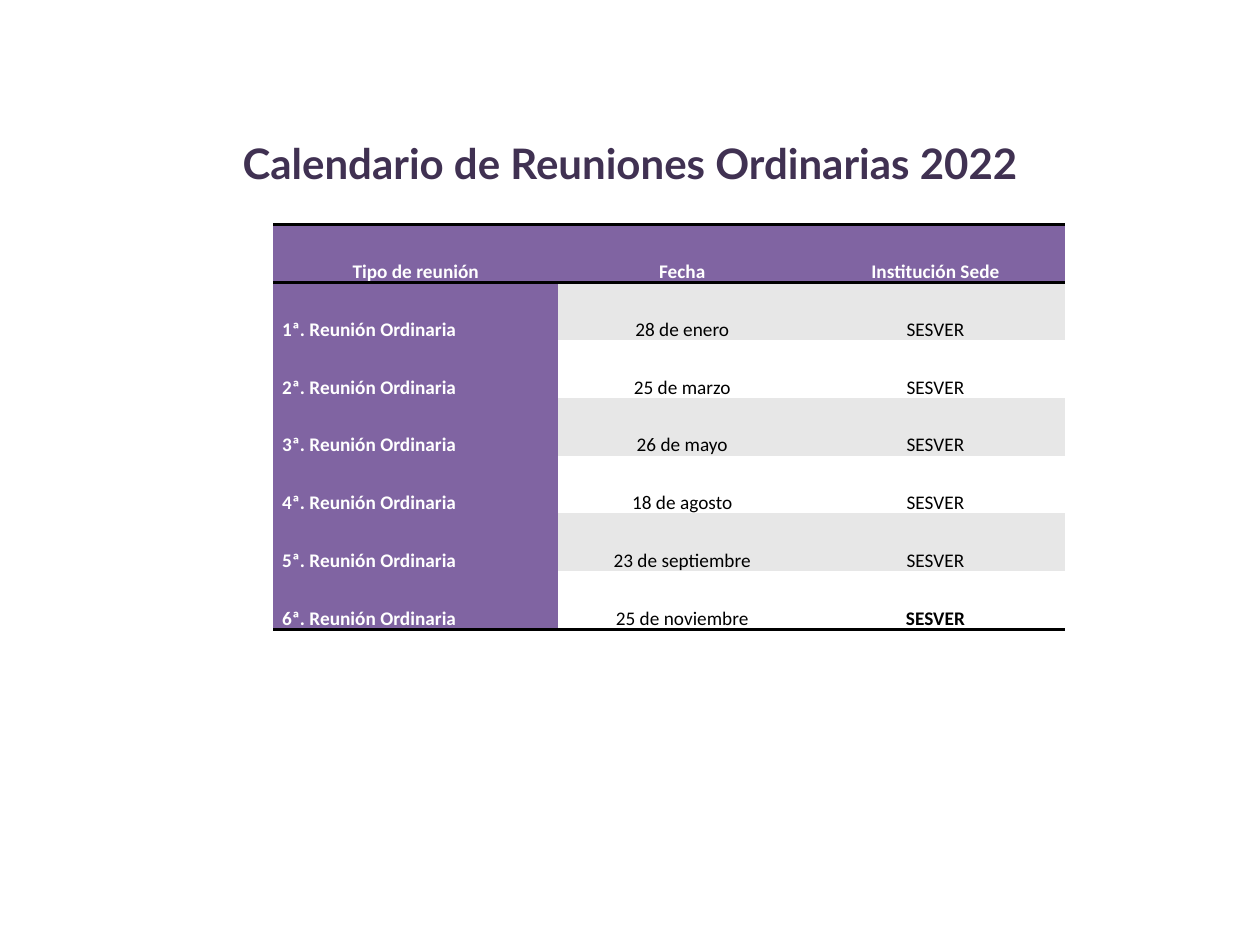
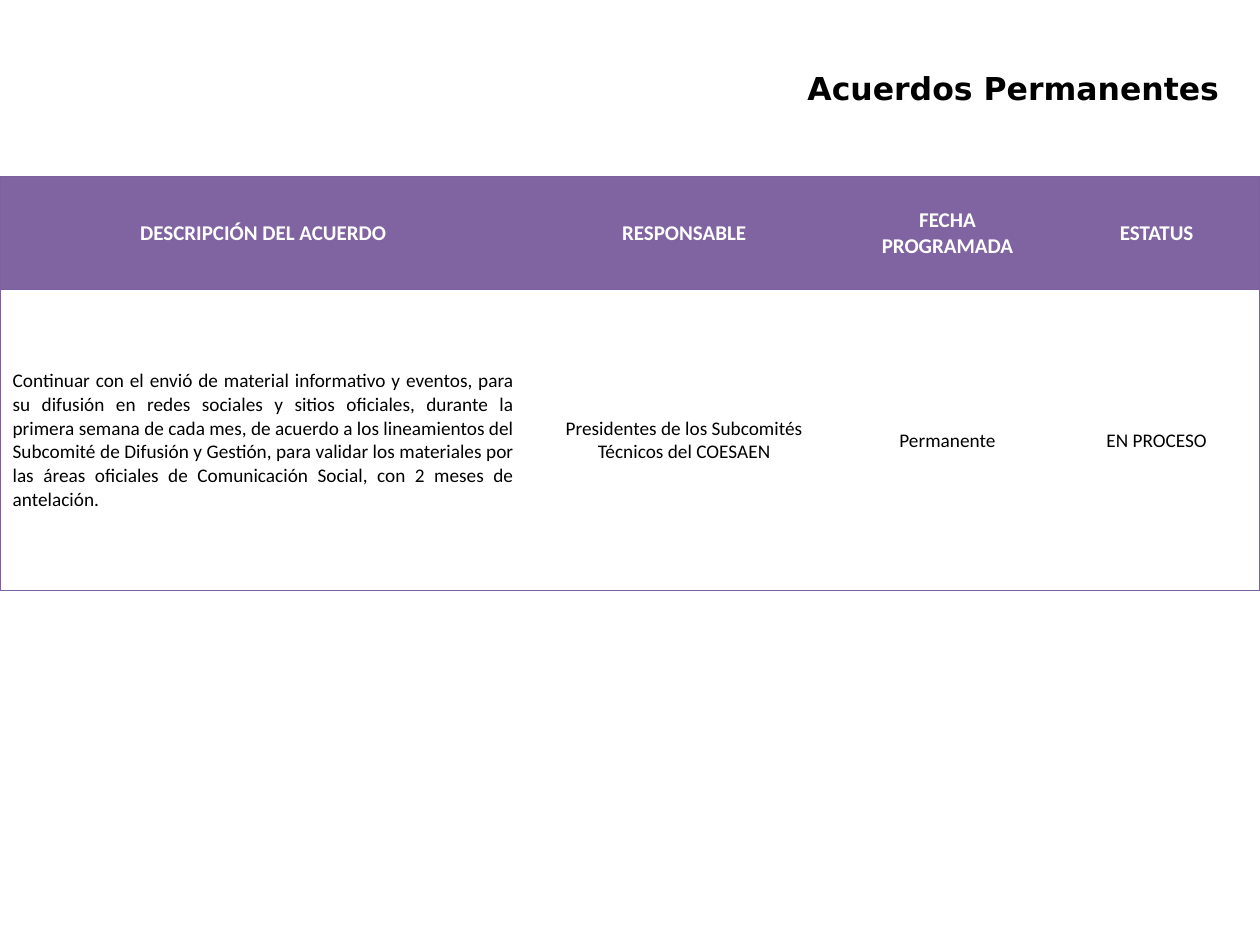
from lxml import etree
from pptx import Presentation
from pptx import util as u
from pptx.dml import color
from pptx.enum import text
from pptx.oxml import ns

PURPLE, BORDER, GREY, WHITE, BLACK = "8064A2", "7D60A0", "E7E7E7", "FFFFFF", "000000"
TITLE_PURPLE = "403152"
PLAIN_TABLE_STYLE = "{2D5ABB26-0587-4C30-8999-92F81FD0307C}"
LEFT, CENTER, JUSTIFY = text.PP_ALIGN.LEFT, text.PP_ALIGN.CENTER, text.PP_ALIGN.JUSTIFY

CALENDAR_TITLE = "Calendario de Reuniones Ordinarias 2022"
CALENDAR_HEADER = ("Tipo de reunión", "Fecha", "Institución Sede")
MEETING_DATES = ("28 de enero", "25 de marzo", "26 de mayo", "18 de agosto",
                 "23 de septiembre", "25 de noviembre")
VENUE = "SESVER"

AGREEMENTS_TITLE = "Acuerdos Permanentes"
AGREEMENTS = (
    ("DESCRIPCIÓN DEL ACUERDO", "RESPONSABLE", "FECHA PROGRAMADA", "ESTATUS"),
    ("Continuar con el envió de material informativo y eventos, para su difusión en redes "
     "sociales y sitios oficiales, durante la primera semana de cada mes, de acuerdo a los "
     "lineamientos del Subcomité de Difusión y Gestión, para validar los materiales por las "
     "áreas oficiales de Comunicación Social, con 2 meses de antelación.",
     "Presidentes de los Subcomités Técnicos del COESAEN", "Permanente", "EN PROCESO"),
)


def rgb(value):
    return color.RGBColor.from_string(value)


def format_paragraph(paragraph, font, size, colour, bold, align):
    paragraph.alignment = align
    for run in paragraph.runs:
        run.font.name = font
        run.font.size = u.Pt(size)
        run.font.bold = bold
        run.font.color.rgb = rgb(colour)


def add_title(slide, content, box, font, size, colour, align, wrap):
    frame = slide.shapes.add_textbox(*map(u.Inches, box)).text_frame
    frame.word_wrap = wrap
    frame.vertical_anchor = text.MSO_ANCHOR.MIDDLE if wrap else text.MSO_ANCHOR.TOP
    frame.text = content
    format_paragraph(frame.paragraphs[0], font, size, colour, True, align)


def add_plain_table(slide, left, top, widths, heights):
    frame = slide.shapes.add_table(
        len(heights), len(widths), u.Inches(left), u.Inches(top),
        u.Inches(sum(widths)), u.Inches(sum(heights)))
    frame.element.find(".//" + ns.qn("a:tableStyleId")).text = PLAIN_TABLE_STYLE
    table = frame.table
    for column, width in zip(table.columns, widths):
        column.width = u.Inches(width)
    for row, height in zip(table.rows, heights):
        row.height = u.Inches(height)
    return table


def set_borders(cell, sides, colour, points):
    properties = cell._tc.get_or_add_tcPr()
    for side in "LRTB":
        if side in sides:
            line = etree.SubElement(properties, ns.qn("a:ln" + side), w=str(u.Pt(points)))
            fill = etree.SubElement(line, ns.qn("a:solidFill"))
            etree.SubElement(fill, ns.qn("a:srgbClr"), val=colour)


def fill_cell(cell, content, fill, size, colour, bold, align):
    cell.fill.solid()
    cell.fill.fore_color.rgb = rgb(fill)
    cell.text_frame.text = content
    format_paragraph(cell.text_frame.paragraphs[0], "Calibri", size, colour, bold, align)


def add_calendar(slide):
    add_title(slide, CALENDAR_TITLE, (0.69, 0.73, 8.62, 1.12), "Lato", 24,
              TITLE_PURPLE, CENTER, True)
    rows = [CALENDAR_HEADER] + [(f"{number}ª. Reunión Ordinaria", date, VENUE)
                                for number, date in enumerate(MEETING_DATES, 1)]
    last = len(rows) - 1
    table = add_plain_table(slide, 2.17, 1.78, (2.26, 1.97, 2.05), [0.43] * last + [0.46])
    for r, row in enumerate(rows):
        for c, content in enumerate(row):
            cell = table.cell(r, c)
            heading = r == 0 or c == 0
            set_borders(cell, {0: "TB", last: "B"}.get(r, ""), BLACK, 2)
            fill_cell(cell, content, PURPLE if heading else GREY if r % 2 else WHITE, 11,
                      WHITE if heading else BLACK, heading or (r, c) == (last, 2),
                      LEFT if r and c == 0 else CENTER)
            cell.margin_left = cell.margin_right = u.Inches(0.07)
            cell.margin_top = cell.margin_bottom = 0
            paragraph = cell.text_frame.paragraphs[0]
            paragraph.line_spacing = 2.5
            paragraph.space_after = u.Pt(10)


def add_agreements(slide):
    widths = (4.18, 2.5, 1.68, 1.64)
    table = add_plain_table(slide, 0, 1.4, widths, (0.9, 2.39))
    for r, row in enumerate(AGREEMENTS):
        for c, content in enumerate(row):
            cell = table.cell(r, c)
            sides = "T" + "B" * (r == 1) + "L" * (c == 0) + "R" * (c == len(widths) - 1)
            set_borders(cell, sides, BORDER, 0.75)
            if r == 0:
                fill_cell(cell, content, PURPLE, 12, WHITE, True, CENTER)
            else:
                fill_cell(cell, content, WHITE, 11, BLACK, False, CENTER if c else JUSTIFY)
            cell.vertical_anchor = text.MSO_ANCHOR.MIDDLE
    add_title(slide, AGREEMENTS_TITLE, (6.31, 0.5, 3.49, 0.4), "DejaVu Sans", 18,
              BLACK, LEFT, False)


def main():
    presentation = Presentation()
    presentation.slide_width = u.Inches(10)
    presentation.slide_height = u.Inches(7.5)
    for build in (add_calendar, add_agreements):
        build(presentation.slides.add_slide(presentation.slide_layouts[6]))
    presentation.save("out.pptx")


if __name__ == "__main__":
    main()
